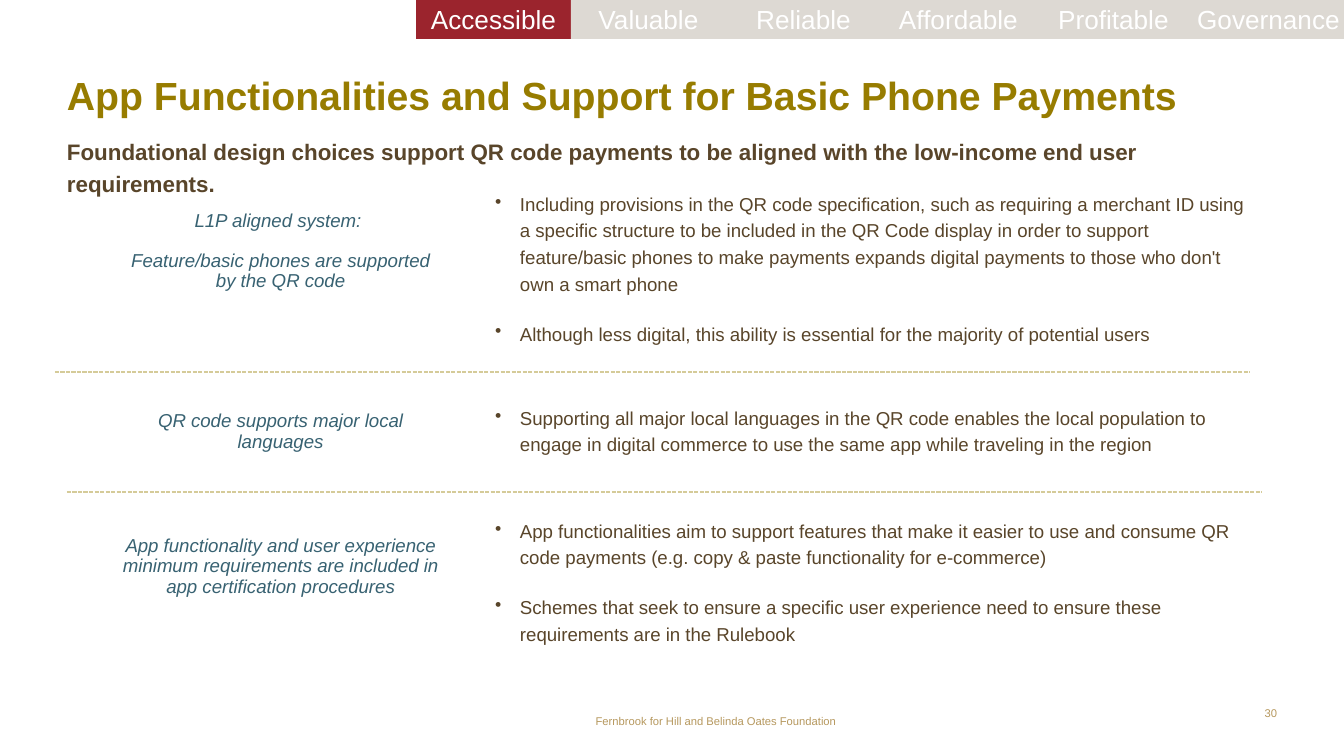
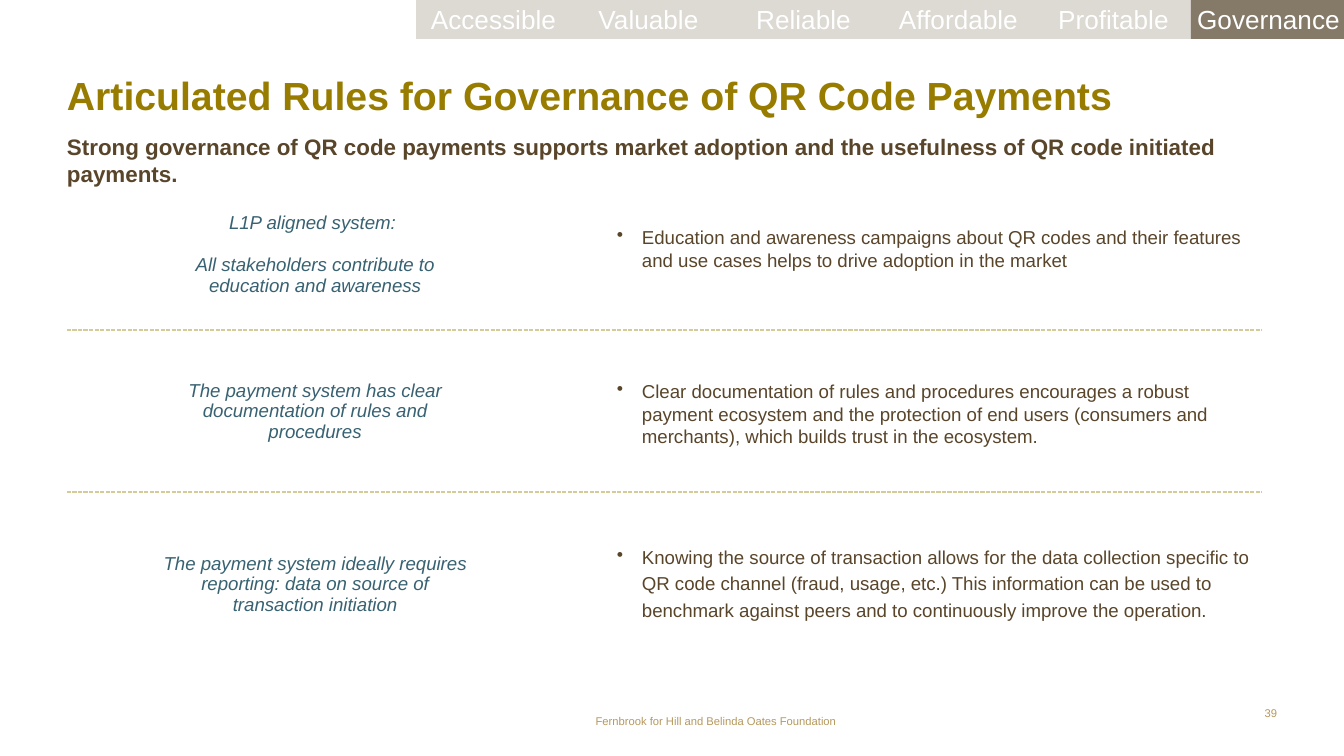
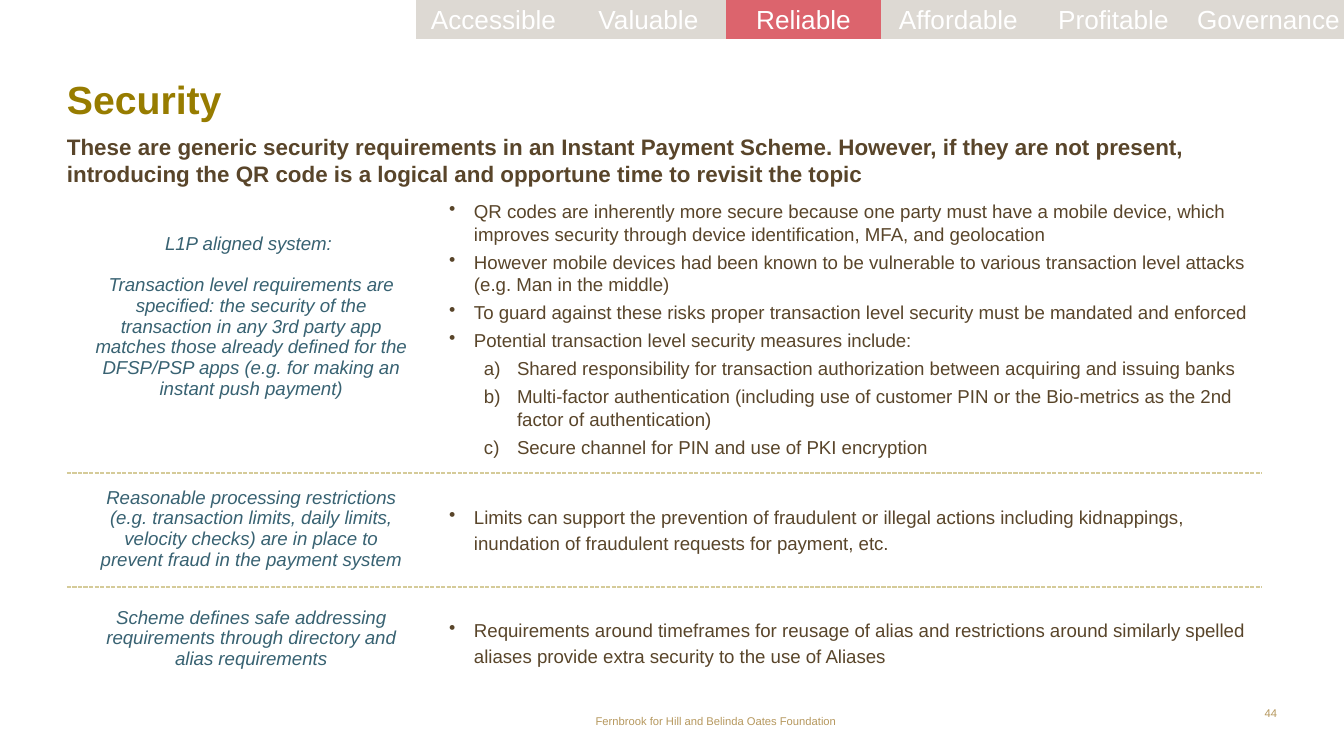
from lxml.etree import SubElement as Sub
from pptx import Presentation
from pptx.dml.color import RGBColor
from pptx.enum.dml import MSO_LINE
from pptx.enum.shapes import MSO_CONNECTOR as Link, MSO_SHAPE as Form
from pptx.enum.text import MSO_ANCHOR as Anchor, PP_ALIGN as Align
from pptx.oxml.ns import qn
from pptx.util import Emu, Pt

GOLD = RGBColor(0x97, 0x7C, 0x00)
BROWN = RGBColor(0x59, 0x45, 0x2A)
TEAL = RGBColor(0x38, 0x62, 0x72)
SAND = RGBColor(0xB6, 0x98, 0x5E)
RULE = RGBColor(0xD5, 0xCB, 0x99)
PALE = RGBColor(0xDD, 0xD9, 0xD3)
WHITE = RGBColor(0xFF, 0xFF, 0xFF)
CRIMSON = RGBColor(0x9B, 0x24, 0x2D)
CORAL = RGBColor(0xDC, 0x64, 0x6D)
TAUPE = RGBColor(0x85, 0x79, 0x68)

FONT = "Arial"
PLAIN = "{2D5ABB26-0587-4C30-8999-92F81FD0307C}"
TABS = ["Accessible", "Valuable", "Reliable", "Affordable", "Profitable", "Governance"]
FOOTER = "Fernbrook for Hill and Belinda Oates Foundation"
AIM = "L1P aligned system: "


def px(n):
    return Emu(round(n * 9144000 / 1344))


class Deck:
    def __init__(self):
        self.prs = Presentation()
        self.prs.slide_width = px(1344)
        self.prs.slide_height = px(756)
        self.slide = None

    def style(self, frame, lines, size, color, bold=False, slant=False,
              align=Align.LEFT, lead=1.0, before=0, after=0):
        frame.text = "\n".join(lines)
        for i, para in enumerate(frame.paragraphs):
            para.alignment = align
            para.line_spacing = lead
            para.space_before = Pt(before if i else 0)
            para.space_after = Pt(after)
            for run in para.runs:
                font = run.font
                font.name, font.size = FONT, Pt(size)
                font.bold, font.italic = bold, slant
                font.color.rgb = color

    def trim(self, frame, wrap=True):
        frame.margin_left = frame.margin_right = 0
        frame.margin_top = frame.margin_bottom = 0
        frame.word_wrap = wrap

    def text(self, box, lines, size, color, wrap=True, **look):
        frame = self.slide.shapes.add_textbox(*map(px, box)).text_frame
        self.trim(frame, wrap)
        self.style(frame, lines, size, color, **look)
        return frame

    def mark(self, para, indent, hang, tag, **kind):
        props = para._p.get_or_add_pPr()
        props.set("marL", str(px(indent)))
        props.set("indent", str(-px(hang)))
        Sub(props, qn(tag), **kind)

    def points(self, box, lines, steps=(), **look):
        frame = self.text(box, [*lines, *steps], 10, BROWN, **look)
        for i, para in enumerate(frame.paragraphs):
            if i < len(lines):
                self.mark(para, 25, 25, "a:buChar", char="•")
            else:
                self.mark(para, 68, 33, "a:buAutoNum", type="alphaLcParenR")

    def loose(self, box, lines):
        self.points(box, lines, lead=1.2, before=6, after=6)

    def note(self, box, lines, lead=1.0):
        table = self.slide.shapes.add_table(1, 1, *map(px, box)).table
        table.first_row = table.horz_banding = False
        table._tbl.tblPr[0].text = PLAIN
        cell = table.cell(0, 0)
        cell.fill.background()
        cell.margin_left = cell.margin_right = 0
        cell.margin_top = cell.margin_bottom = px(9)
        cell.vertical_anchor = Anchor.MIDDLE
        self.style(cell.text_frame, lines, 10, TEAL, slant=True,
                   align=Align.CENTER, lead=lead, before=11)

    def rule(self, y, x=67):
        ends = map(px, (x, y, x + 1195, y))
        line = self.slide.shapes.add_connector(Link.STRAIGHT, *ends)
        line.line.color.rgb = RULE
        line.line.width = Pt(0.75)
        line.line.dash_style = MSO_LINE.SQUARE_DOT
        Sub(line._element.spPr, qn("a:effectLst"))

    def tab(self, i, name, color):
        box = map(px, (416 + 155 * i, -1, 155, 40))
        shape = self.slide.shapes.add_shape(Form.RECTANGLE, *box)
        shape.shadow.inherit = False
        shape.fill.solid()
        shape.fill.fore_color.rgb = color
        shape.line.fill.background()
        frame = shape.text_frame
        self.trim(frame)
        frame.vertical_anchor = Anchor.MIDDLE
        self.style(frame, [name], 14, WHITE, align=Align.CENTER)

    def page(self, num, title, lede, active, color, top=0.95, lead=1.0):
        self.slide = self.prs.slides.add_slide(self.prs.slide_layouts[6])
        self.text((1263, 706, 14, 13), [num], 6, SAND, wrap=False, align=Align.RIGHT)
        self.text((583, 714, 253, 13), [FOOTER], 6, SAND, wrap=False, align=Align.RIGHT)
        self.text((67, 75, 1210, 56), [title], 21, GOLD, wrap=False, bold=True, lead=top)
        self.text((67, 133, 1210, 78), [lede], 12, BROWN, bold=True, lead=lead)
        for i, name in enumerate(TABS):
            self.tab(i, name, color if name == active else PALE)


def phones(deck):
    deck.page("30", "App Functionalities and Support for Basic Phone Payments",
              "Foundational design choices support QR code payments to be aligned "
              "with the low-income end user requirements.",
              "Accessible", CRIMSON, lead=1.2)
    deck.note((120, 199, 321, 105),
              [AIM, "Feature/basic phones are supported by the QR code"], lead=0.95)
    deck.note((120, 399, 321, 65), ["QR code supports major local languages"])
    deck.note((120, 523, 321, 87),
              ["App functionality and user experience minimum requirements are "
               "included in app certification procedures"])
    deck.loose((495, 188, 755, 140),
               ["Including provisions in the QR code specification, such as requiring "
                "a merchant ID using a specific structure to be included in the QR Code "
                "display in order to support feature/basic phones to make payments "
                "expands digital payments to those who don't own a smart phone",
                "Although less digital, this ability is essential for the majority of "
                "potential users"])
    deck.loose((495, 402, 767, 65),
               ["Supporting all major local languages in the QR code enables the local "
                "population to engage in digital commerce to use the same app while "
                "traveling in the region"])
    deck.loose((495, 515, 767, 172),
               ["App functionalities aim to support features that make it easier to use "
                "and consume QR code payments (e.g. copy & paste functionality for "
                "e-commerce)",
                "Schemes that seek to ensure a specific user experience need to ensure "
                "these requirements are in the Rulebook"])
    deck.rule(372, x=55)
    deck.rule(492)


def rules(deck):
    deck.page("39", "Articulated Rules for Governance of QR Code Payments",
              "Strong governance of QR code payments supports market adoption and the "
              "usefulness of QR code initiated payments.",
              "Governance", TAUPE)
    deck.note((156, 200, 318, 109),
              [AIM, "All stakeholders contribute to education and awareness"])
    deck.note((156, 368, 318, 87),
              ["The payment system has clear documentation of rules and procedures"])
    deck.note((156, 541, 318, 87),
              ["The payment system ideally requires reporting: data on source of "
               "transaction initiation"])
    deck.points((617, 226, 645, 69),
                ["Education and awareness campaigns about QR codes and their features "
                 "and use cases helps to drive adoption in the market"])
    deck.points((617, 380, 645, 81),
                ["Clear documentation of rules and procedures encourages a robust payment "
                 "ecosystem and the protection of end users (consumers and merchants), "
                 "which builds trust in the ecosystem."])
    deck.loose((617, 541, 645, 134),
               ["Knowing the source of transaction allows for the data collection "
                "specific to QR code channel (fraud, usage, etc.) This information can "
                "be used to benchmark against peers and to continuously improve the "
                "operation."])
    deck.rule(330)
    deck.rule(492)


def safety(deck):
    deck.page("44", "Security",
              "These are generic security requirements in an Instant Payment Scheme. "
              "However, if they are not present, introducing the QR code is a logical "
              "and opportune time to revisit the topic",
              "Reliable", CORAL, top=1.0)
    deck.note((93, 217, 316, 199),
              [AIM, "Transaction level requirements are specified: the security of the "
               "transaction in any 3rd party app matches those already defined for the "
               "DFSP/PSP apps (e.g. for making an instant push payment)"])
    deck.note((93, 474, 316, 110),
              ["Reasonable processing restrictions (e.g. transaction limits, daily "
               "limits, velocity checks) are in place to prevent fraud in the payment "
               "system"])
    deck.note((93, 582, 316, 113),
              ["Scheme defines safe addressing requirements through directory and alias "
               "requirements"])
    deck.points((449, 200, 813, 253),
                ["QR codes are inherently more secure because one party must have a "
                 "mobile device, which improves security through device identification, "
                 "MFA, and geolocation",
                 "However mobile devices had been known to be vulnerable to various "
                 "transaction level attacks (e.g. Man in the middle)",
                 "To guard against these risks proper transaction level security must be "
                 "mandated and enforced",
                 "Potential transaction level security measures include:"],
                ["Shared responsibility for transaction authorization between acquiring "
                 "and issuing banks",
                 "Multi-factor authentication (including use of customer PIN or the "
                 "Bio-metrics as the 2nd factor of authentication)",
                 "Secure channel for PIN and use of PKI encryption"],
                before=3)
    deck.loose((449, 501, 813, 70),
               ["Limits can support the prevention of fraudulent or illegal actions "
                "including kidnappings, inundation of fraudulent requests for payment, "
                "etc."])
    deck.loose((449, 614, 813, 66),
               ["Requirements around timeframes for reusage of alias and restrictions "
                "around similarly spelled aliases provide extra security to the use of "
                "Aliases"])
    deck.rule(473)
    deck.rule(587)


def main():
    deck = Deck()
    phones(deck)
    rules(deck)
    safety(deck)
    deck.prs.save("out.pptx")


if __name__ == "__main__":
    main()
